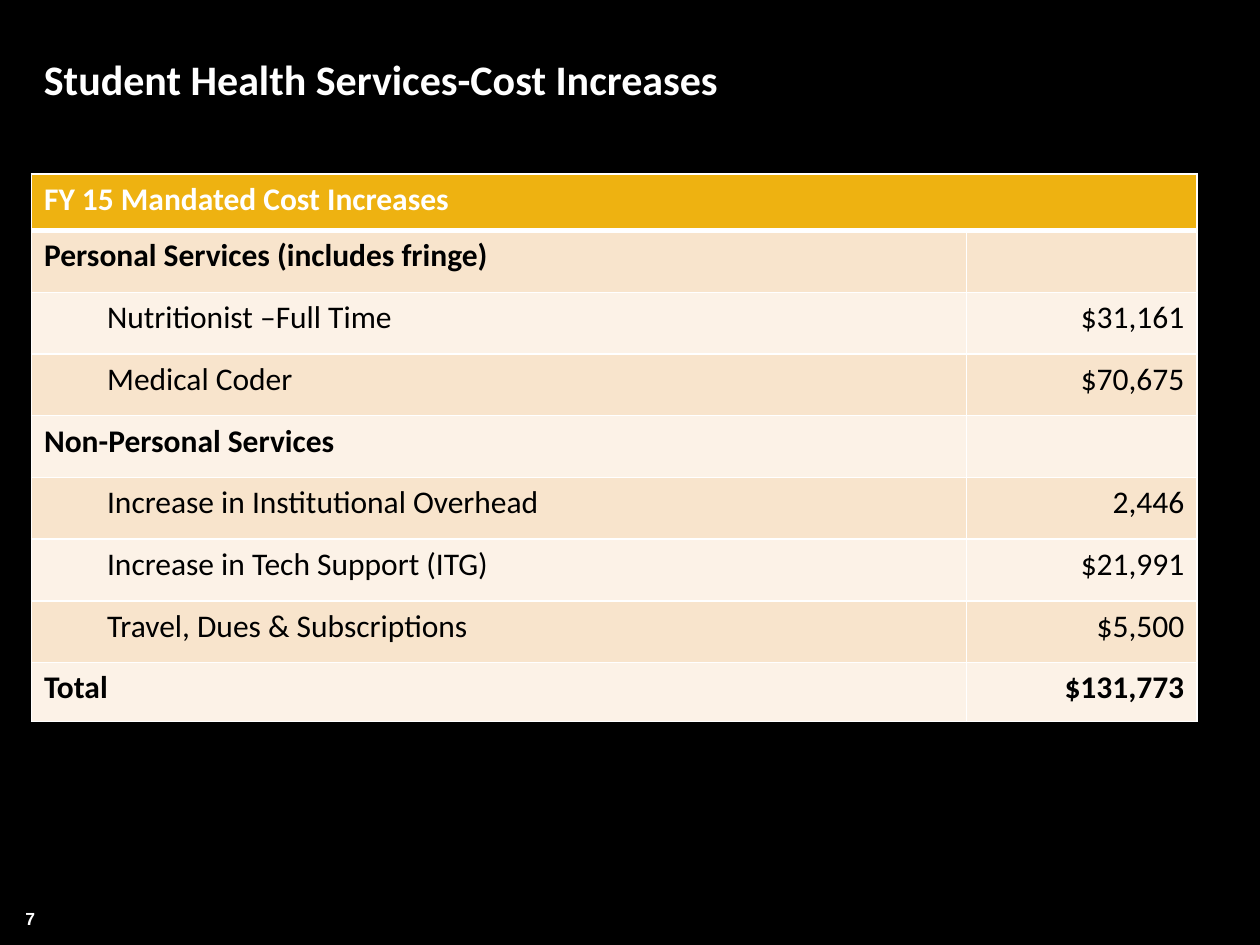
from lxml import etree
from pptx import Presentation
from pptx.dml.color import RGBColor
from pptx.enum.text import MSO_ANCHOR, PP_ALIGN
from pptx.oxml.ns import qn
from pptx.util import Inches, Pt

LEFT, CENTER, RIGHT = PP_ALIGN.LEFT, PP_ALIGN.CENTER, PP_ALIGN.RIGHT
MIDDLE, TOP = MSO_ANCHOR.MIDDLE, MSO_ANCHOR.TOP

BLACK = RGBColor(0x00, 0x00, 0x00)
WHITE = RGBColor(0xFF, 0xFF, 0xFF)
GOLD = RGBColor(0xEE, 0xB2, 0x11)
BANDS = (RGBColor(0xFC, 0xF2, 0xE7), RGBColor(0xF8, 0xE4, 0xCC))

WIDTH, HEIGHT = Inches(10), Inches(7.5)
MARGIN = Inches(0.25)
COLUMN_WIDTHS = (7.42, 1.83)
HEADER_HEIGHT, ROW_HEIGHT, TOTAL_HEIGHT = 0.45, 0.49, 0.47

HEADER = "FY 15 Mandated Cost Increases"
# Label, amount, whether the row is a bold heading or total
COSTS = [
    ("Personal Services (includes fringe)", "", True),
    ("Nutritionist –Full Time", "$31,161", False),
    ("Medical Coder", "$70,675", False),
    ("Non-Personal Services", "", True),
    ("Increase in Institutional Overhead", "2,446", False),
    ("Increase in Tech Support (ITG)", "$21,991", False),
    ("Travel, Dues & Subscriptions", "$5,500", False),
    ("Total", "$131,773", True),
]


def style_paragraph(para, text, size, color, bold, align=LEFT, font="Calibri"):
    para.text = text
    para.alignment = align
    para.font.name = font
    para.font.size = Pt(size)
    para.font.bold = bold
    para.font.color.rgb = color


def add_text(page, text, left, top, width, height, size, anchor,
             side_inset=0.1, **style):
    box = page.shapes.add_textbox(left, top, width, height)
    frame = box.text_frame
    frame.word_wrap = True
    frame.vertical_anchor = anchor
    frame.margin_left = frame.margin_right = Inches(side_inset)
    style_paragraph(frame.paragraphs[0], text, size, WHITE, True, **style)


def set_borders(cell, bottom=1, top=1):
    properties = cell._tc.get_or_add_tcPr()
    sides = (("lnL", 1), ("lnR", 1), ("lnT", top), ("lnB", bottom))
    for position, (side, points) in enumerate(sides):
        line = etree.Element(qn(f"a:{side}"), w=str(Pt(points)))
        fill = etree.SubElement(line, qn("a:solidFill"))
        etree.SubElement(fill, qn("a:srgbClr"), val=str(WHITE))
        properties.insert(position, line)


def fill_cell(cell, text, fill, color, bold, align=LEFT, indent=0, **borders):
    cell.fill.solid()
    cell.fill.fore_color.rgb = fill
    set_borders(cell, **borders)
    para = cell.text_frame.paragraphs[0]
    if indent:
        para.level = 1
        para._p.get_or_add_pPr().set("marL", str(Inches(indent)))
    style_paragraph(para, text, 18, color, bold, align)


def add_cost_table(page):
    heights = [HEADER_HEIGHT] + [ROW_HEIGHT] * (len(COSTS) - 1) + [TOTAL_HEIGHT]
    table = page.shapes.add_table(
        len(heights), len(COLUMN_WIDTHS), MARGIN, Inches(1.38),
        Inches(sum(COLUMN_WIDTHS)), Inches(sum(heights))).table
    for column, width in zip(table.columns, COLUMN_WIDTHS):
        column.width = Inches(width)
    for row, height in zip(table.rows, heights):
        row.height = Inches(height)

    # Header across both columns
    table.cell(0, 0).merge(table.cell(0, 1))
    for column, text in enumerate((HEADER, "")):
        fill_cell(table.cell(0, column), text, GOLD, WHITE, True, bottom=3)

    # Banded cost rows
    for row, (label, amount, bold) in enumerate(COSTS, start=1):
        band = BANDS[row % 2]
        top = 3 if row == 1 else 1
        fill_cell(table.cell(row, 0), label, band, BLACK, bold,
                  indent=0 if bold else 0.5, top=top)
        fill_cell(table.cell(row, 1), amount, band, BLACK, bold, RIGHT, top=top)
    table.cell(1, 0).text_frame.paragraphs[0].space_after = Pt(6)


def main():
    deck = Presentation()
    deck.slide_width, deck.slide_height = WIDTH, HEIGHT
    page = deck.slides.add_slide(deck.slide_layouts[6])
    page.background.fill.solid()
    page.background.fill.fore_color.rgb = BLACK

    # Slide number, title and table
    add_text(page, "7", Inches(0.02), Inches(7.16), Inches(0.44), Inches(0.27),
             10, TOP, side_inset=0, align=CENTER, font="Arial")
    add_text(page, "Student Health Services-Cost Increases",
             MARGIN, 0, Inches(9.58), HEIGHT // 6, 24, MIDDLE)
    add_cost_table(page)
    deck.save("out.pptx")


if __name__ == "__main__":
    main()
